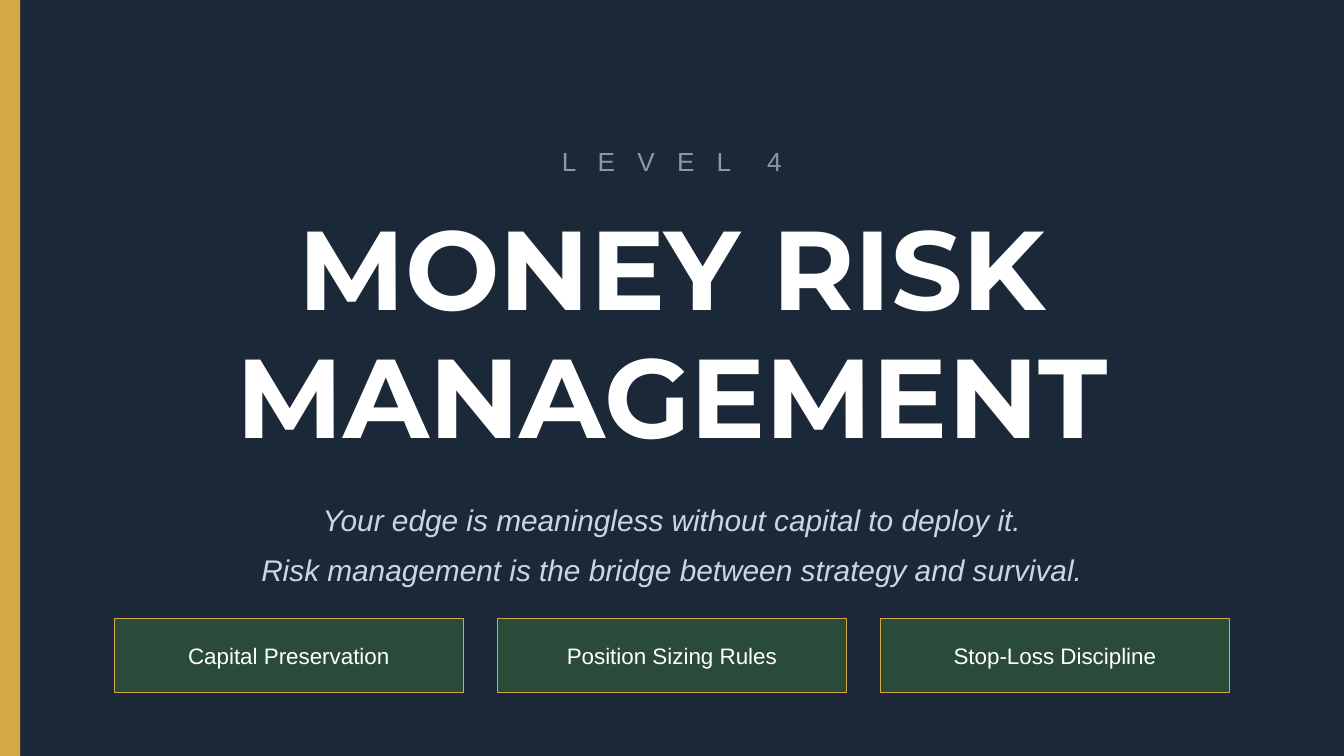
import pptx
import pptx.util
import pptx.dml.color
import pptx.enum.shapes
import pptx.enum.text
from pptx.util import Inches

NAVY = pptx.dml.color.RGBColor(0x1B, 0x28, 0x38)
GOLD = pptx.dml.color.RGBColor(0xD4, 0xA8, 0x43)
GREEN = pptx.dml.color.RGBColor(0x2A, 0x4A, 0x3A)
GREY = pptx.dml.color.RGBColor(0x88, 0x99, 0xAA)
PALE_BLUE = pptx.dml.color.RGBColor(0xC8, 0xD6, 0xE5)
WHITE = pptx.dml.color.RGBColor(0xFF, 0xFF, 0xFF)
RECTANGLE = pptx.enum.shapes.MSO_SHAPE.RECTANGLE


def write_text(shape, text, *, size, color, font="Arial", bold=False,
               italic=False, line_spacing=None, letter_spacing=None):
    """Fill a shape with centred text, one paragraph per line."""
    frame = shape.text_frame
    frame.word_wrap = True
    frame.auto_size = pptx.enum.text.MSO_AUTO_SIZE.NONE
    frame.vertical_anchor = pptx.enum.text.MSO_ANCHOR.MIDDLE
    frame.text = text
    for paragraph in frame.paragraphs:
        paragraph.alignment = pptx.enum.text.PP_ALIGN.CENTER
        paragraph.line_spacing = line_spacing
        for run in paragraph.runs:
            run.font.name = font
            run.font.size = pptx.util.Pt(size)
            run.font.bold = bold
            run.font.italic = italic
            run.font.color.rgb = color
            if letter_spacing:
                run.font._element.set("spc", str(letter_spacing * 100))


# 16:9 slide on a dark background
presentation = pptx.Presentation()
presentation.slide_width = Inches(10)
presentation.slide_height = Inches(10) * 9 // 16
slide = presentation.slides.add_slide(presentation.slide_layouts[5])
slide.background.fill.solid()
slide.background.fill.fore_color.rgb = NAVY

# Gold bar along the left edge
bar = slide.shapes.add_shape(RECTANGLE, 0, 0, Inches(0.15), presentation.slide_height)
bar.shadow.inherit = False
bar.fill.solid()
bar.fill.fore_color.rgb = GOLD
bar.line.fill.background()

# Level label
level = slide.shapes.add_textbox(Inches(0.5), Inches(1), Inches(9), Inches(0.4))
write_text(level, "L E V E L  4", size=14, color=GREY, letter_spacing=4)

# Title
title = slide.shapes.title
title.left, title.top = Inches(0.5), Inches(1.4)
title.width, title.height = Inches(9), Inches(2.2)
write_text(title, "MONEY RISK\nMANAGEMENT", size=60, color=WHITE,
           font="Montserrat", bold=True, line_spacing=0.95)

# Tagline
tagline = slide.shapes.add_textbox(Inches(1), Inches(3.6), Inches(8), Inches(0.8))
write_text(tagline,
           "Your edge is meaningless without capital to deploy it.\n"
           "Risk management is the bridge between strategy and survival.",
           size=16, color=PALE_BLUE, italic=True, line_spacing=1.4)

# Row of topic cards
card_width, card_gap = 2.6, 0.25
topics = ["Capital Preservation", "Position Sizing Rules", "Stop-Loss Discipline"]
for index, topic in enumerate(topics):
    left = 0.85 + index * (card_width + card_gap)
    card = slide.shapes.add_shape(RECTANGLE, Inches(left), Inches(4.6),
                                  Inches(card_width), Inches(0.55))
    card.shadow.inherit = False
    card.fill.solid()
    card.fill.fore_color.rgb = GREEN
    card.line.color.rgb = GOLD
    card.line.width = pptx.util.Pt(0.5)
    write_text(card, topic, size=12, color=WHITE)

presentation.save("out.pptx")
